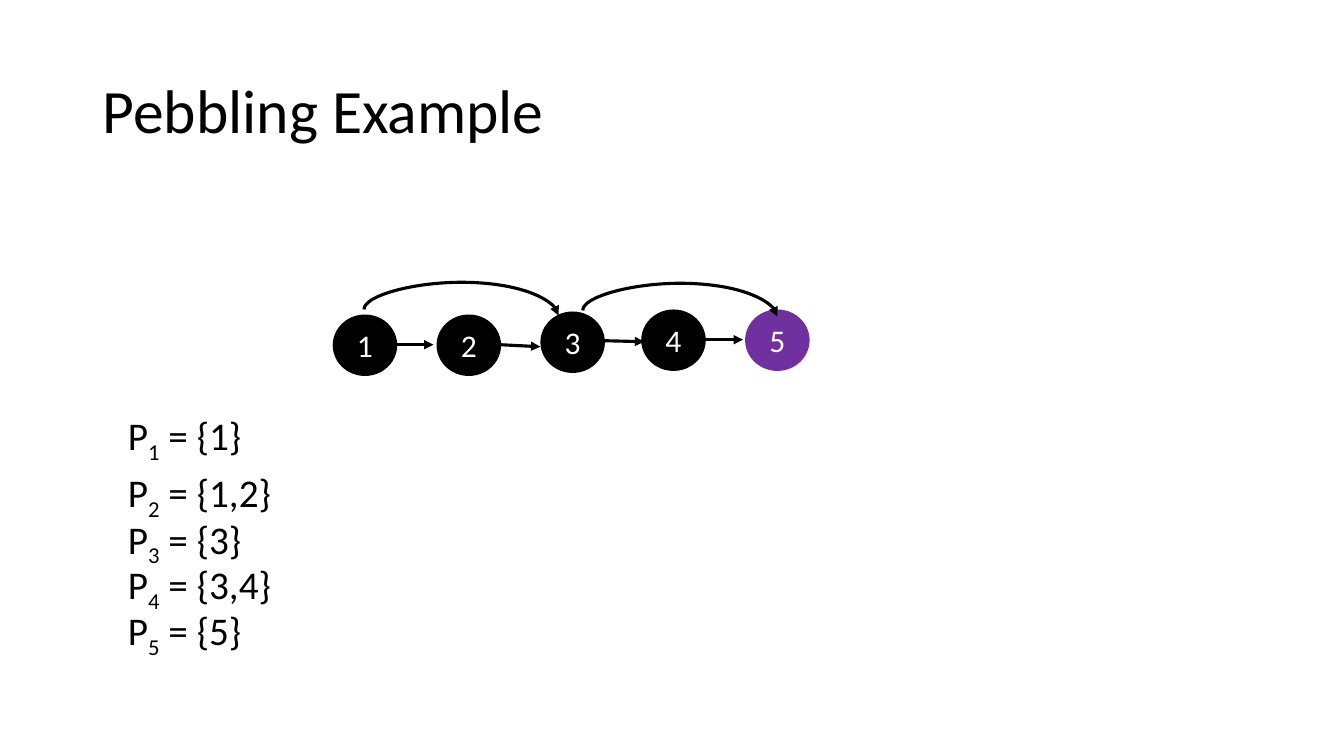
from lxml.etree import SubElement
from pptx import Presentation
from pptx.dml.color import RGBColor
from pptx.enum.shapes import MSO_CONNECTOR as LINK, MSO_SHAPE as SHAPE
from pptx.enum.text import MSO_ANCHOR as ANCHOR, MSO_AUTO_SIZE as FIT, PP_ALIGN as ALIGN
from pptx.oxml.ns import qn
from pptx.util import Inches, Pt

BLACK, WHITE, PURPLE = "000000", "FFFFFF", "7030A0"
NODE_W, NODE_H = 0.64, 0.61
ARC_SPAN, ARC_DROP, ARC_RISE = 1.93, 0.06, 0.27


def color(hex_code):
    return RGBColor.from_string(hex_code)


def write(paragraph, text, size=28, ink=BLACK, baseline=None):
    run = paragraph.add_run()
    run.text = text
    run.font.name = "Calibri"
    run.font.size = Pt(size)
    run.font.color.rgb = color(ink)
    if baseline is not None:
        run.font._element.set("baseline", str(baseline * 1000))


def add_title(slide, left, top, width, height):
    title = slide.shapes.add_textbox(*map(Inches, (left, top, width, height))).text_frame
    title.word_wrap = True
    title.vertical_anchor = ANCHOR.MIDDLE
    title.paragraphs[0].line_spacing = 0.9
    write(title.paragraphs[0], "Pebbling Example", size=44)


def add_node(slide, label, left, top, fill):
    node = slide.shapes.add_shape(SHAPE.OVAL, *map(Inches, (left, top, NODE_W, NODE_H)))
    node.shadow.inherit = False
    node.fill.solid()
    node.fill.fore_color.rgb = color(fill)
    node.line.fill.background()
    node.text_frame.vertical_anchor = ANCHOR.MIDDLE
    caption = node.text_frame.paragraphs[0]
    caption.alignment = ALIGN.CENTER
    write(caption, label, size=22.5, ink=WHITE)


def add_arrow(slide, kind, *ends):
    arrow = slide.shapes.add_connector(kind, *map(Inches, ends))
    arrow.line.color.rgb = color(BLACK)
    arrow.line.width = Pt(2.25)
    SubElement(arrow.line._get_or_add_ln(), qn("a:tailEnd"), type="triangle")
    SubElement(arrow._element.spPr, qn("a:effectLst"))
    return arrow


def add_arc(slide, left, top):
    center_x, center_y = left + ARC_SPAN / 2, top + ARC_DROP / 2
    arc = add_arrow(slide, LINK.CURVE,
                    center_x + ARC_DROP / 2, center_y - ARC_SPAN / 2,
                    center_x - ARC_DROP / 2, center_y + ARC_SPAN / 2)
    properties = arc._element.spPr
    properties.find(qn("a:xfrm")).set("rot", str(270 * 60000))
    geometry = properties.find(qn("a:prstGeom"))
    adjustments = geometry.find(qn("a:avLst"))
    if adjustments is None:
        adjustments = SubElement(geometry, qn("a:avLst"))
    bend = round(-ARC_RISE / ARC_DROP * 100000)
    SubElement(adjustments, qn("a:gd"), name="adj1", fmla=f"val {bend}")


def add_graph(slide, left, top):
    nodes = [(0, 0.05), (1.03, 0.05), (2.06, 0.02), (3.06, 0), (4.09, 0)]
    for number, (dx, dy) in enumerate(nodes, 1):
        fill = PURPLE if number == len(nodes) else BLACK
        add_node(slide, str(number), left + dx, top + dy, fill)
    edges = [(0.6, 0.35, 0.35), (1.66, 0.35, 0.37), (2.69, 0.31, 0.32), (3.67, 0.3, 0.3)]
    for dx, start, end in edges:
        add_arrow(slide, LINK.STRAIGHT, left + dx, top + start, left + dx + 0.4, top + end)
    for dx, dy in [(0.31, 0), (2.48, 0.01)]:
        add_arc(slide, left + dx, top + dy)


def add_pebble_sets(slide, left, top):
    rows = [("1", 0), ("1,2", 0.57), ("3", 1.03), ("3,4", 1.48), ("5", 1.94)]
    for number, (members, dy) in enumerate(rows, 1):
        width = 1.66 if "," in members else 1.36
        box = slide.shapes.add_textbox(*map(Inches, (left, top + dy, width, 0.57)))
        box.text_frame.word_wrap = False
        box.text_frame.auto_size = FIT.SHAPE_TO_FIT_TEXT
        line = box.text_frame.paragraphs[0]
        write(line, "P")
        write(line, str(number), baseline=-25)
        write(line, f" = {{{members}}}", baseline=0)


def main():
    deck = Presentation()
    deck.slide_width, deck.slide_height = Inches(13.33), Inches(7.5)
    slide = deck.slides.add_slide(deck.slide_layouts[6])
    add_title(slide, 0.92, 0.4, 11.5, 1.45)
    add_graph(slide, 3.3, 3.07)
    add_pebble_sets(slide, 1.17, 4.03)
    deck.save("out.pptx")


if __name__ == "__main__":
    main()
